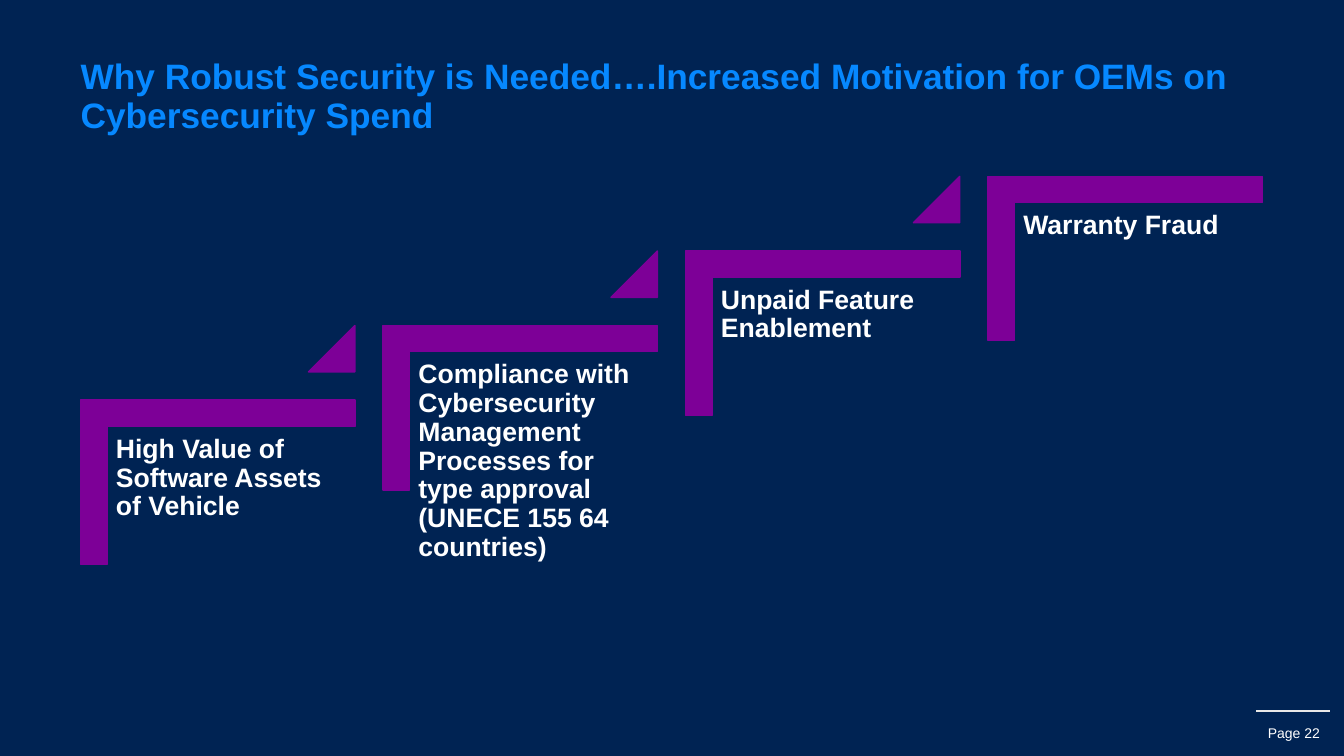
from pptx import Presentation
from pptx.dml.color import RGBColor
from pptx.enum.shapes import MSO_CONNECTOR, MSO_SHAPE
from pptx.enum.text import MSO_ANCHOR, PP_ALIGN
from pptx.oxml.ns import qn
from pptx.util import Inches, Pt
from lxml.etree import SubElement

TITLE = "Why Robust Security is Needed….Increased Motivation for OEMs on Cybersecurity Spend"
PAGE_LABEL = "Page 22"
STEPS = [
    "High Value of Software Assets of Vehicle",
    "Compliance with Cybersecurity Management Processes for type approval (UNECE 155 64 countries)",
    "Unpaid Feature Enablement",
    "Warranty Fraud",
]

NAVY, BLUE, PURPLE, WHITE, GRAY = "002353", "0688FF", "7D0097", "FFFFFF", "E8E7E7"
TITLE_FONT = {"name": "Arial", "size": Pt(25.2), "bold": True}
STEP_FONT = {"name": "Arial", "size": Pt(19), "bold": True}
PAGE_FONT = {"name": "Arial", "size": Pt(10), "bold": False}

# Each step moves right and up from the one before.
FIRST_LEFT, FIRST_TOP = 0.8, 3.97
STEP_RIGHT, STEP_UP = 3.0, 0.74
CORNER_WIDTH, CORNER_HEIGHT, CORNER_THICKNESS = 2.72, 1.63, 0.26
TRIANGLE_SIZE = 0.46


def color(hex_value):
    return RGBColor.from_string(hex_value)


def add_text(slide, text, box, font, font_color, margin=0.0, **paragraph_format):
    """Add a wrapped, top-anchored text box holding one paragraph."""
    frame = slide.shapes.add_textbox(*map(Inches, box)).text_frame
    frame.word_wrap = True
    frame.vertical_anchor = MSO_ANCHOR.TOP
    for side in ("left", "top", "right", "bottom"):
        setattr(frame, f"margin_{side}", Inches(margin))
    paragraph = frame.paragraphs[0]
    for name, value in paragraph_format.items():
        setattr(paragraph, name, value)
    run = paragraph.add_run()
    run.text = text
    for name, value in font.items():
        setattr(run.font, name, value)
    run.font.color.rgb = color(font_color)


def paint_purple(shape):
    shape.shadow.inherit = False
    shape.fill.solid()
    shape.fill.fore_color.rgb = color(PURPLE)
    shape.line.color.rgb = color(PURPLE)
    shape.line.width = Pt(1)


def add_corner(slide, left, top):
    """Add an angle with one arm along the top and one down the left side."""
    right, bottom = left + CORNER_WIDTH, top + CORNER_HEIGHT
    inner_left, inner_top = left + CORNER_THICKNESS, top + CORNER_THICKNESS
    outline = [(right, top), (right, inner_top), (inner_left, inner_top),
               (inner_left, bottom), (left, bottom)]
    builder = slide.shapes.build_freeform(Inches(left), Inches(top))
    builder.add_line_segments([(Inches(x), Inches(y)) for x, y in outline], close=True)
    paint_purple(builder.convert_to_shape())


def add_step(slide, index, text):
    left = FIRST_LEFT + index * STEP_RIGHT
    top = FIRST_TOP - index * STEP_UP
    add_corner(slide, left, top)
    add_text(slide, text, (left + 0.27, top + 0.27, 2.45, 2.15), STEP_FONT, WHITE,
             margin=0.08, line_spacing=0.9)
    if index < len(STEPS) - 1:
        box = (left + CORNER_WIDTH - TRIANGLE_SIZE, top - 0.74, TRIANGLE_SIZE, TRIANGLE_SIZE)
        triangle = slide.shapes.add_shape(MSO_SHAPE.ISOSCELES_TRIANGLE, *map(Inches, box))
        triangle.adjustments[0] = 1.0
        paint_purple(triangle)


def add_page_label(slide):
    rule = slide.shapes.add_connector(
        MSO_CONNECTOR.STRAIGHT, *map(Inches, (12.46, 7.05, 13.19, 7.05)))
    rule.line.color.rgb = color(GRAY)
    rule.line.width = Pt(1.5)
    SubElement(rule._element.spPr, qn("a:effectLst"))
    add_text(slide, PAGE_LABEL, (12.22, 7.19, 0.87, 0.2), PAGE_FONT, WHITE,
             alignment=PP_ALIGN.RIGHT)


def main():
    presentation = Presentation()
    presentation.slide_width, presentation.slide_height = Inches(13.33), Inches(7.5)
    slide = presentation.slides.add_slide(presentation.slide_layouts[6])
    slide.background.fill.solid()
    slide.background.fill.fore_color.rgb = color(NAVY)

    add_page_label(slide)
    add_text(slide, TITLE, (0.8, 0.59, 11.73, 0.45), TITLE_FONT, BLUE, line_spacing=0.9)
    for index, text in enumerate(STEPS):
        add_step(slide, index, text)
    presentation.save("out.pptx")


if __name__ == "__main__":
    main()
